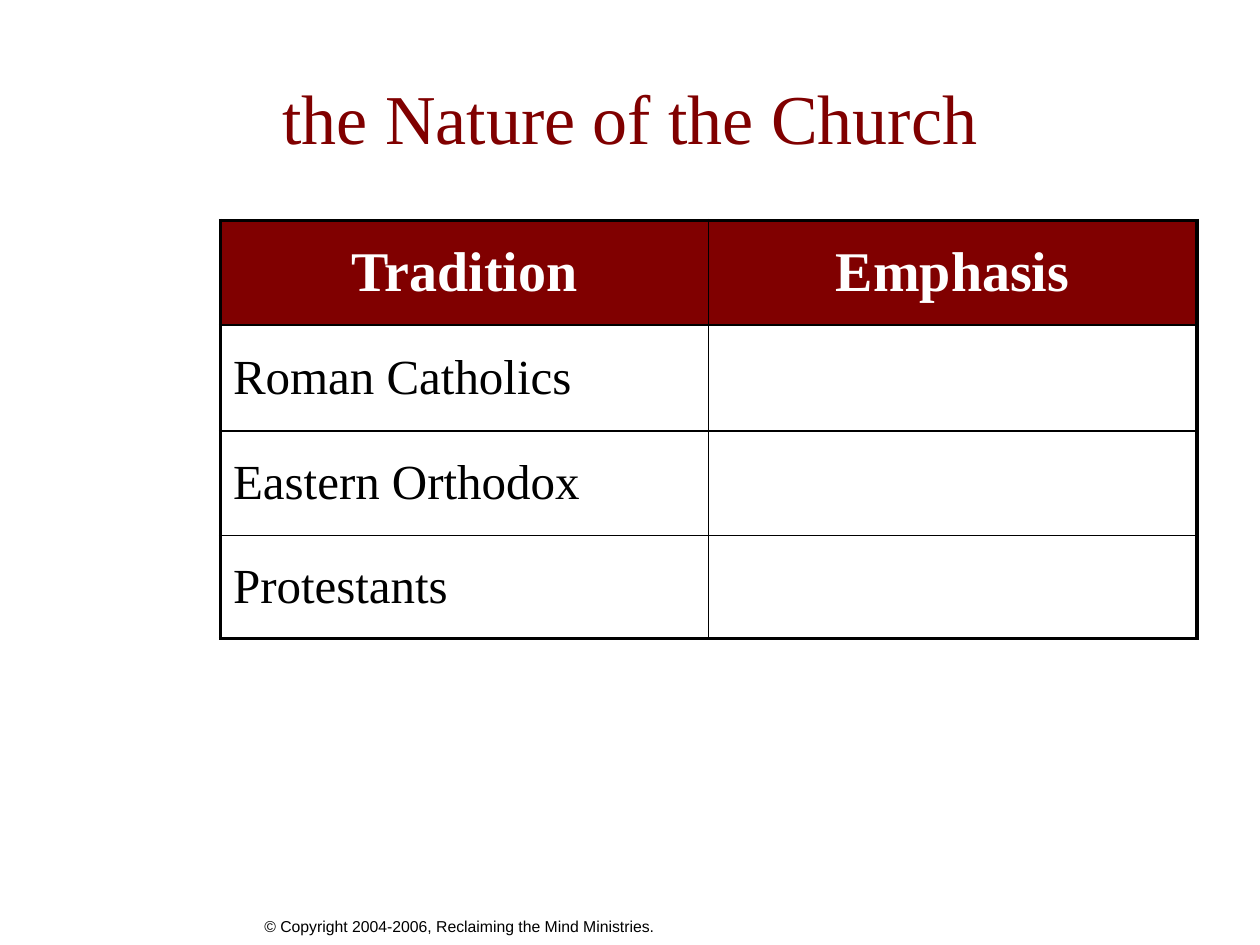
import pptx
import pptx.util
import pptx.dml.color
import pptx.enum.text
import pptx.oxml
import pptx.oxml.ns
from pptx.util import Inches, Pt

TITLE = "the Nature of the Church"
COPYRIGHT = "© Copyright 2004-2006, Reclaiming the Mind Ministries."
ROWS = [
    ("Tradition", "Emphasis"),
    ("Roman Catholics", ""),
    ("Eastern Orthodox", ""),
    ("Protestants", ""),
]
ROW_HEIGHTS = [0.83, 0.84, 0.83, 0.82]
TABLE_BOX = (1.75, 1.75, 7.75, 3.32)
COLORS = {"maroon": "800000", "white": "FFFFFF", "black": "000000"}
SERIF, SANS = "Times New Roman", "Arial"
OUTER, INNER = 2.25, 1
ALIGN = pptx.enum.text.PP_ALIGN
MIDDLE = pptx.enum.text.MSO_ANCHOR.MIDDLE


def rgb(name):
    return pptx.dml.color.RGBColor.from_string(COLORS[name])


def format_text(p, font, size, color, bold=False, align=ALIGN.LEFT):
    p.alignment = align
    for r in p.runs:
        r.font.name, r.font.size, r.font.bold = font, Pt(size), bold
        r.font.color.rgb = rgb(color)


def set_borders(cell, widths):
    """Draw the cell's left, right, top and bottom lines, widths in points."""
    tcPr = cell._tc.get_or_add_tcPr()
    for i, (side, width) in enumerate(zip("LRTB", widths)):
        tcPr.insert(i, pptx.oxml.parse_xml(
            f'<a:ln{side} {pptx.oxml.ns.nsdecls("a")} w="{Pt(width)}"><a:solidFill>'
            f'<a:srgbClr val="{COLORS["black"]}"/></a:solidFill></a:ln{side}>'))


def add_title(s):
    sp = s.shapes.title
    sp.left, sp.top, sp.width, sp.height = map(Inches, (0.5, 0.3, 9, 1.25))
    tf = sp.text_frame
    tf.text = TITLE
    tf.vertical_anchor = MIDDLE
    format_text(tf.paragraphs[0], SERIF, 40, "maroon", align=ALIGN.CENTER)


def add_traditions(s):
    last_row, last_col = len(ROWS) - 1, len(ROWS[0]) - 1
    table = s.shapes.add_table(len(ROWS), len(ROWS[0]), *map(Inches, TABLE_BOX)).table
    table.horz_banding = False
    for row, height in zip(table.rows, ROW_HEIGHTS):
        row.height = Inches(height)
    for i, texts in enumerate(ROWS):
        for j, text in enumerate(texts):
            cell = table.cell(i, j)
            cell.text = text
            cell.vertical_anchor = MIDDLE
            cell.fill.solid()
            cell.fill.fore_color.rgb = rgb("white" if i else "maroon")
            p = cell.text_frame.paragraphs[0]
            if i == 0:
                format_text(p, SERIF, 32, "white", True, ALIGN.CENTER)
            else:
                format_text(p, SERIF, 28, "black")
            on_edge = (j == 0, j == last_col, i == 0, i == last_row)
            set_borders(cell, [OUTER if edge else INNER for edge in on_edge])


def add_copyright(s):
    tf = s.shapes.add_textbox(*map(Inches, (2, 7.23, 3.33, 0.52))).text_frame
    tf.word_wrap = True
    tf.text = COPYRIGHT
    format_text(tf.paragraphs[0], SANS, 9, "black")


def main():
    prs = pptx.Presentation()
    prs.slide_width, prs.slide_height = Inches(10), Inches(7.5)
    s = prs.slides.add_slide(prs.slide_layouts[5])
    add_copyright(s)
    add_title(s)
    add_traditions(s)
    prs.save("out.pptx")


if __name__ == "__main__":
    main()
